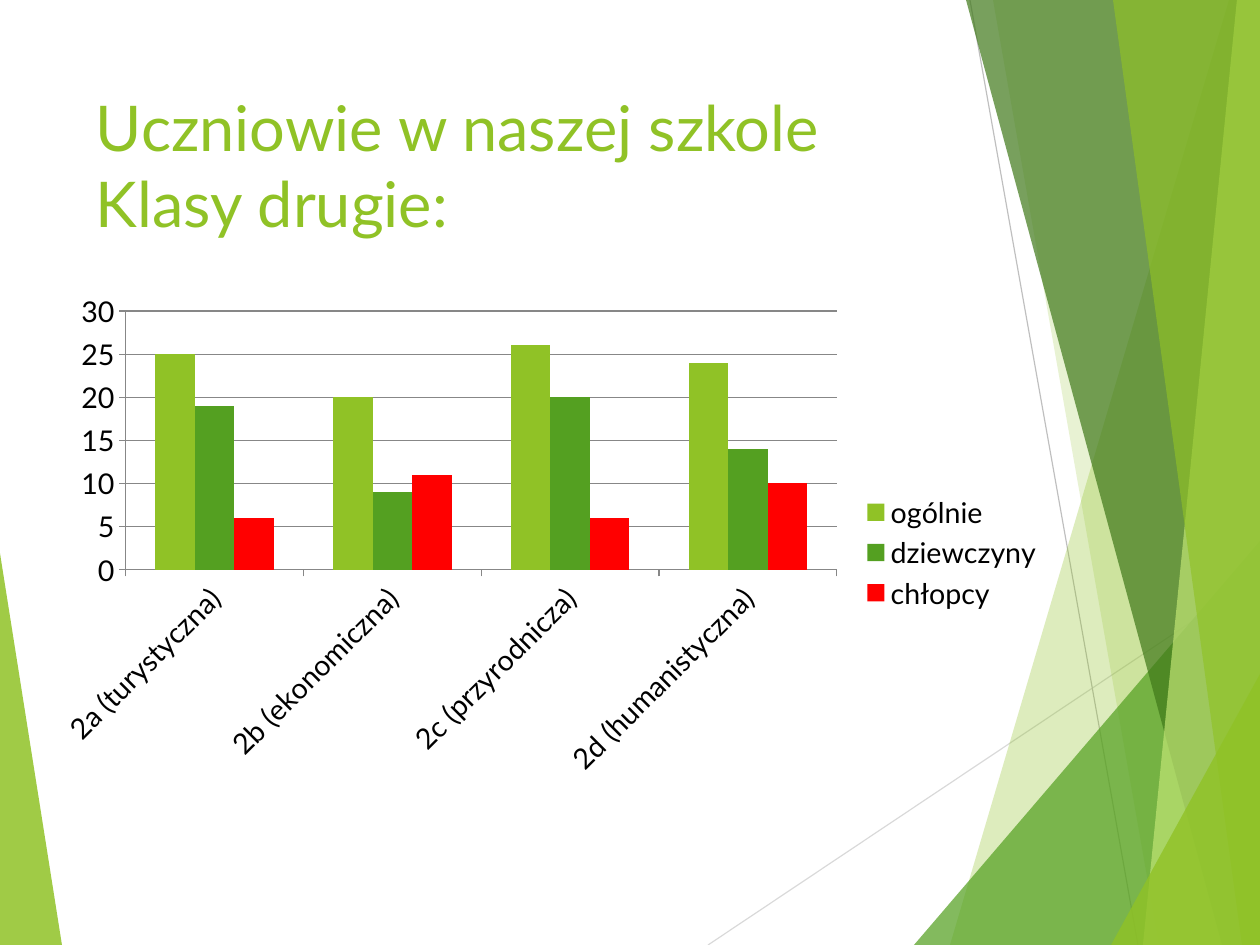
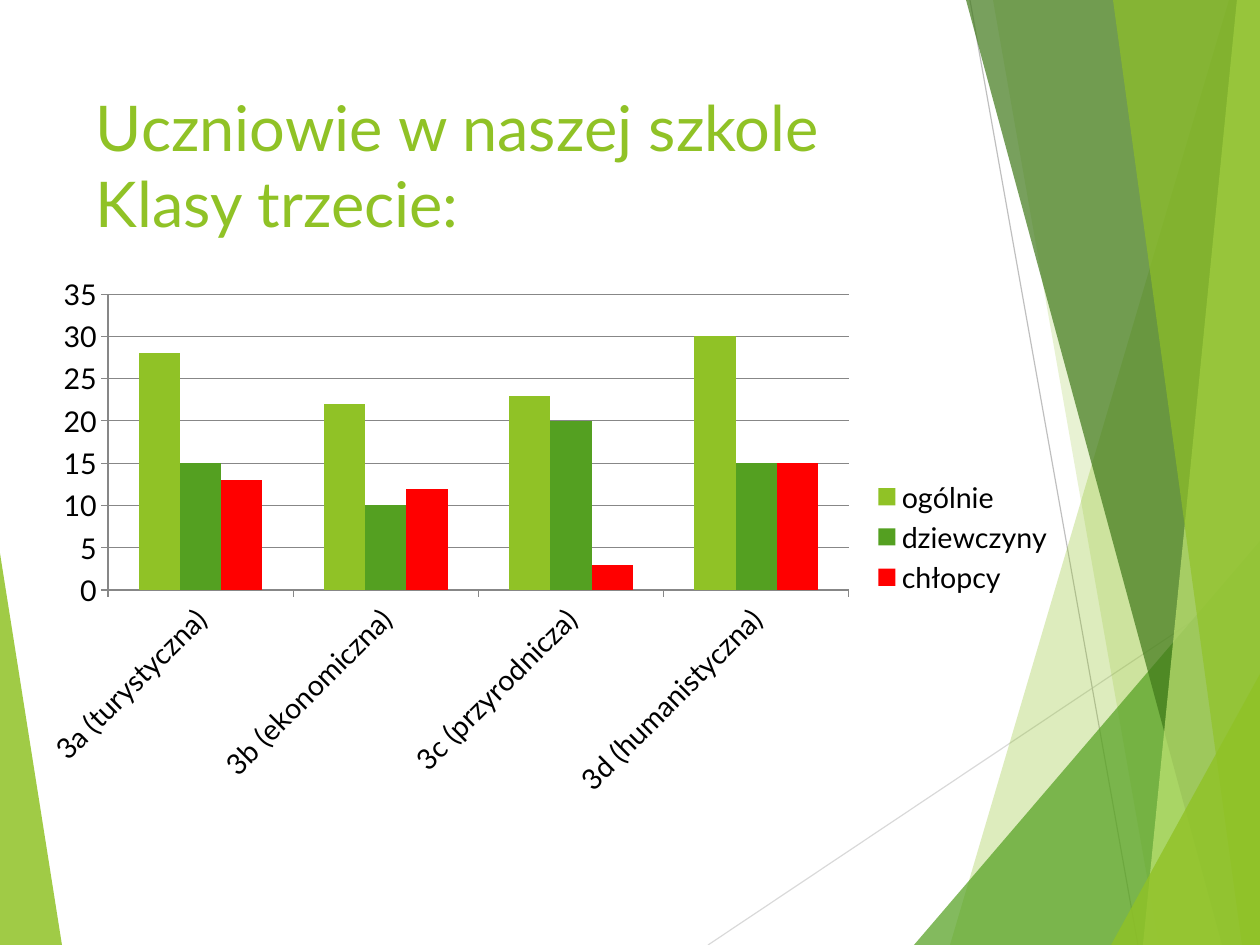
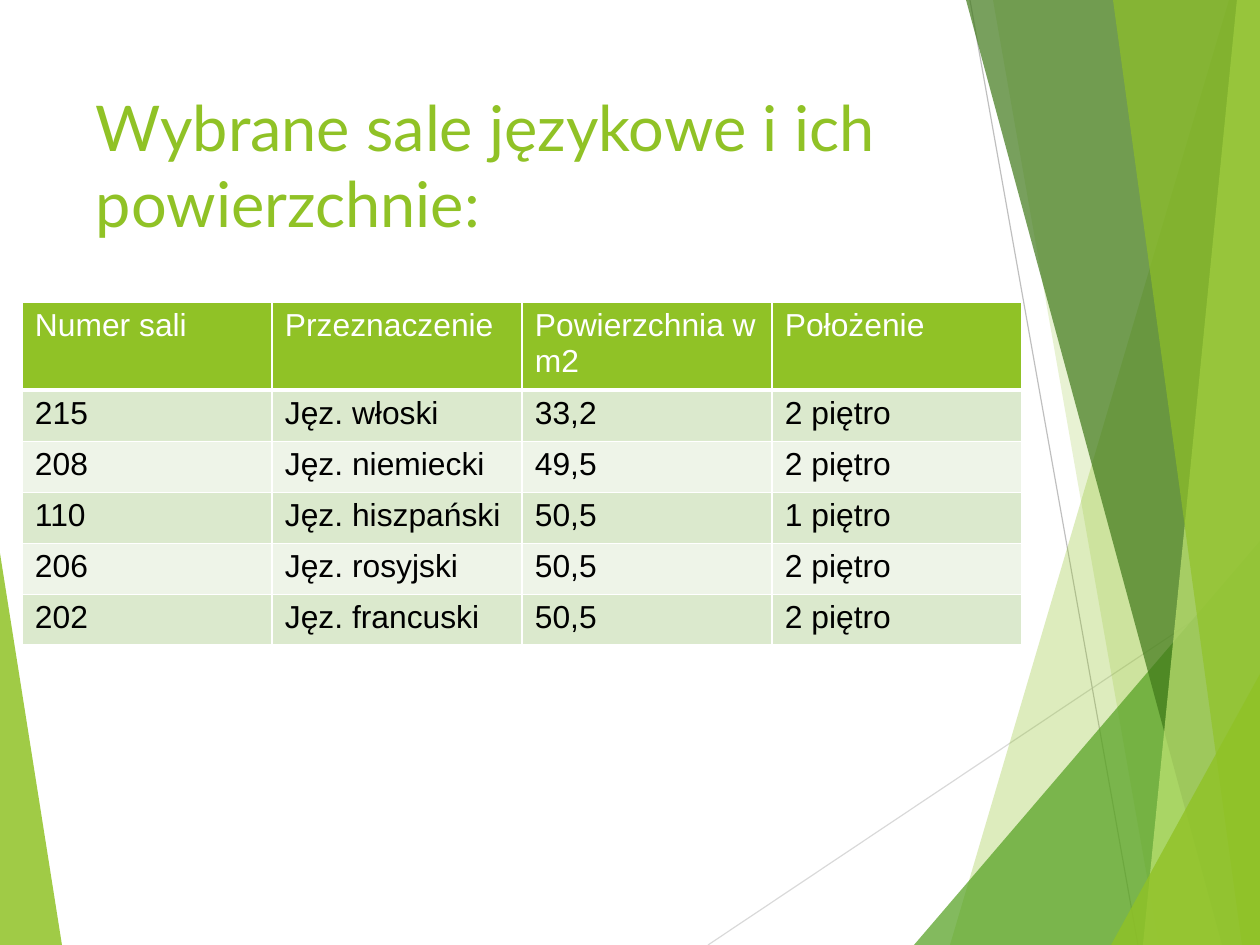
from dataclasses import dataclass

from lxml import etree
from pptx import Presentation
from pptx import util as u
from pptx.chart.data import CategoryChartData
from pptx.dml.color import RGBColor
from pptx.enum import chart as charts
from pptx.oxml import parse_xml
from pptx.oxml.ns import nsdecls, qn

PX = 8000  # EMU in one px
WIDTH, HEIGHT = 1260, 945


@dataclass(frozen=True)
class Theme:
    lime: str = "90C226"
    green: str = "54A021"
    forest: str = "3F7819"
    pale: str = "C0E474"
    red: str = "FF0000"
    black: str = "000000"
    white: str = "FFFFFF"
    axis: str = "878787"
    ray_light: str = "D9D9D9"
    ray_dark: str = "BFBFBF"
    band_odd: str = "DBE9CD"
    band_even: str = "EEF4E8"
    heading_font: str = "Lato"
    table_font: str = "Arial"
    title_size: float = 39.7
    chart_size: int = 18
    table_size: int = 20
    hairline: float = 0.75


theme = Theme()


def rgb(value):
    return RGBColor.from_string(value)


def set_font(font, name, size, color):
    font.name, font.size, font.bold = name, u.Pt(size), False
    font.color.rgb = rgb(color)


# Shared background: rays and translucent shards, from back to front
left_shard = ([(0, 553), (62, HEIGHT), (0, HEIGHT)], theme.lime, 85)
rays = [
    ((708, HEIGHT), (WIDTH, 576), theme.ray_light),
    ((970, 0), (1138, HEIGHT), theme.ray_dark),
]
right_corners = [(WIDTH, HEIGHT), (WIDTH, 0)]
right_shards = [
    ([(1229, 0), (950, HEIGHT), *right_corners], theme.lime, 30),
    ([(993, 0), (1159, HEIGHT), *right_corners], theme.lime, 20),
    ([(914, HEIGHT), (WIDTH, 541), (WIDTH, HEIGHT)], theme.green, 72),
    ([(966, 0), (1222, HEIGHT), *right_corners], theme.forest, 70),
    ([(1237, 0), (1143, HEIGHT), *right_corners], theme.pale, 70),
    ([(1113, 0), (1242, HEIGHT), *right_corners], theme.lime, 65),
    ([(1111, HEIGHT), (WIDTH, 674), (WIDTH, HEIGHT)], theme.lime, 80),
]

# Content
titles = [
    "Uczniowie w naszej szkole\vKlasy drugie:",
    "Uczniowie w naszej szkole\vKlasy trzecie:",
    "Wybrane sale językowe i ich powierzchnie:",
]
profiles = ["a (turystyczna)", "b (ekonomiczna)", "c (przyrodnicza)", "d (humanistyczna)"]
series_styles = [("ogólnie", theme.lime), ("dziewczyny", theme.green), ("chłopcy", theme.red)]
# Year, frame in px, plot area as shares of the frame, axis maximum, values
class_charts = [
    (2, (45, 283, 1010, 539), (0.08, 0.052, 0.704, 0.48), 30,
     [(25, 20, 26, 24), (19, 9, 20, 14), (6, 11, 6, 10)]),
    (3, (27, 266, 1039, 542), (0.078, 0.052, 0.713, 0.546), 35,
     [(28, 22, 23, 30), (15, 10, 20, 15), (13, 12, 3, 15)]),
]
rooms = [
    ("Numer sali", "Przeznaczenie", "Powierzchnia w m2", "Położenie"),
    ("215", "Jęz. włoski", "33,2", "2 piętro"),
    ("208", "Jęz. niemiecki", "49,5", "2 piętro"),
    ("110", "Jęz. hiszpański", "50,5", "1 piętro"),
    ("206", "Jęz. rosyjski", "50,5", "2 piętro"),
    ("202", "Jęz. francuski", "50,5", "2 piętro"),
]

deck = Presentation()
deck.slide_width, deck.slide_height = WIDTH * PX, HEIGHT * PX

# Pages with background and title
pages = []
for title in titles:
    page = deck.slides.add_slide(deck.slide_layouts[6])
    pages.append(page)

    for start, end, color in rays:
        ray = page.shapes.add_connector(1, *(PX * v for v in (*start, *end)))
        ray.line.color.rgb = rgb(color)
        ray.line.width = u.Pt(theme.hairline)
        etree.SubElement(ray._element.spPr, qn("a:effectLst"))

    for points, color, opacity in [left_shard, *right_shards]:
        outline = page.shapes.build_freeform(*points[0], scale=PX)
        outline.add_line_segments(points[1:], close=True)
        shard = outline.convert_to_shape()
        shard.shadow.inherit = False
        shard.line.fill.background()
        shard.fill.solid()
        shard.fill.fore_color.rgb = rgb(color)
        tint = shard._element.spPr.find(".//" + qn("a:srgbClr"))
        etree.SubElement(tint, qn("a:alpha"), val=str(opacity * 1000))

    box = page.shapes.add_textbox(*(PX * v for v in (83, 83, 874, 182)))
    frame = box.text_frame
    frame.word_wrap = True
    frame.margin_left = frame.margin_right = 13 * PX
    frame.margin_top = frame.margin_bottom = 6 * PX
    para = frame.paragraphs[0]
    para.text = title
    set_font(para.font, theme.heading_font, theme.title_size, theme.lime)

# Charts of the second and third year
for page, (year, place, plot_area, maximum, values) in zip(pages, class_charts):
    data = CategoryChartData()
    data.categories = [f"{year}{profile}" for profile in profiles]
    for (name, color), counts in zip(series_styles, values):
        data.add_series(name, counts)
    chart = page.shapes.add_chart(
        charts.XL_CHART_TYPE.COLUMN_CLUSTERED, *(PX * v for v in place), data
    ).chart
    set_font(chart.font, theme.heading_font, theme.chart_size, theme.black)
    chart.has_title = False
    chart.has_legend = True
    chart.legend.position = charts.XL_LEGEND_POSITION.RIGHT
    chart.legend.include_in_layout = False

    plot = chart.plots[0]
    plot.vary_by_categories = False
    plot.gap_width, plot.overlap = 150, 0
    for series, (name, color) in zip(plot.series, series_styles):
        series.format.fill.solid()
        series.format.fill.fore_color.rgb = rgb(color)

    value_axis, category_axis = chart.value_axis, chart.category_axis
    value_axis.minimum_scale, value_axis.maximum_scale = 0, maximum
    value_axis.major_unit = 5
    value_axis.has_major_gridlines = True
    for lined in (value_axis, category_axis, value_axis.major_gridlines):
        lined.format.line.color.rgb = rgb(theme.axis)
        lined.format.line.width = u.Pt(theme.hairline)
    set_font(category_axis.tick_labels.font, theme.heading_font, theme.chart_size, theme.black)
    category_axis._element.find(".//" + qn("a:bodyPr")).set("rot", "-2700000")

    # Fixed inner plot area
    x, y, w, h = plot_area
    layout = parse_xml(
        f'<c:layout {nsdecls("c")}><c:manualLayout><c:layoutTarget val="inner"/>'
        f'<c:xMode val="edge"/><c:yMode val="edge"/><c:x val="{x}"/><c:y val="{y}"/>'
        f'<c:w val="{w}"/><c:h val="{h}"/></c:manualLayout></c:layout>'
    )
    plot_element = chart._chartSpace.find(".//" + qn("c:plotArea"))
    for automatic in plot_element.findall(qn("c:layout")):
        plot_element.remove(automatic)
    plot_element.insert(0, layout)

# Table of language rooms
column_width, header_height, row_height = 250, 88, 51
table = pages[2].shapes.add_table(
    len(rooms), len(rooms[0]), 22 * PX, 302 * PX, column_width * len(rooms[0]) * PX,
    (header_height + row_height * (len(rooms) - 1)) * PX,
).table
table.horz_banding = False
for column in table.columns:
    column.width = column_width * PX
for i, room in enumerate(rooms):
    header = i == 0
    table.rows[i].height = (header_height if header else row_height) * PX
    band = theme.lime if header else theme.band_odd if i % 2 else theme.band_even
    for j, label in enumerate(room):
        cell = table.cell(i, j)
        cell.margin_left = cell.margin_right = 13 * PX
        cell.margin_top = cell.margin_bottom = 6 * PX
        for side in "LRTB":
            points = 3 if header and side == "B" else 1
            cell._tc.get_or_add_tcPr().append(parse_xml(
                f'<a:ln{side} {nsdecls("a")} w="{u.Pt(points)}"><a:solidFill>'
                f'<a:srgbClr val="{theme.white}"/></a:solidFill></a:ln{side}>'
            ))
        cell.fill.solid()
        cell.fill.fore_color.rgb = rgb(band)
        para = cell.text_frame.paragraphs[0]
        para.text = label
        set_font(para.font, theme.table_font, theme.table_size,
                 theme.white if header else theme.black)

deck.save("out.pptx")
